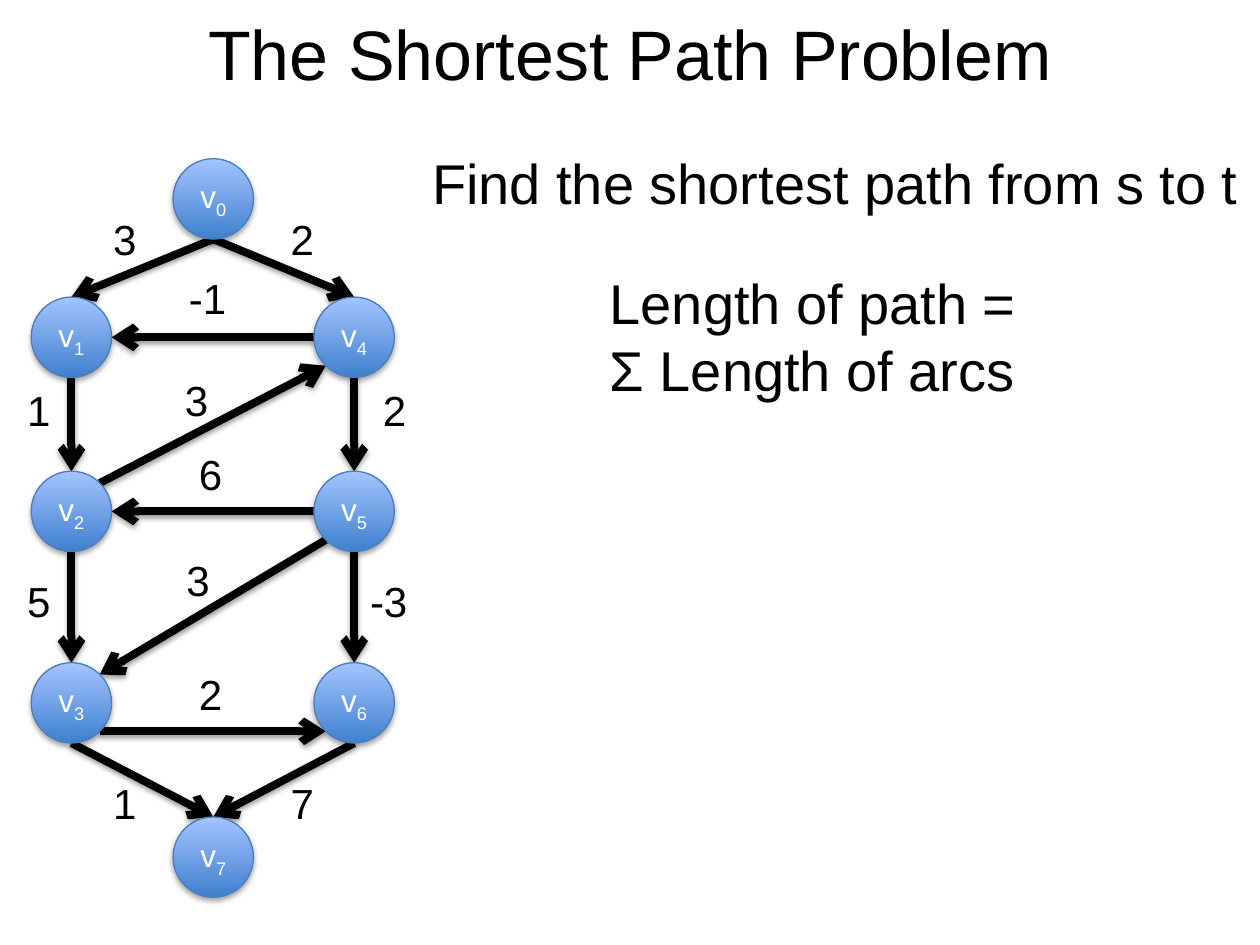
from math import sqrt
from lxml.etree import SubElement
from pptx import Presentation
from pptx.dml.color import RGBColor
from pptx.enum.shapes import MSO_CONNECTOR, MSO_SHAPE
from pptx.enum.text import MSO_ANCHOR, PP_ALIGN
from pptx.oxml.ns import qn
from pptx.util import Cm, Pt

BLACK = RGBColor(0x00, 0x00, 0x00)
WHITE = RGBColor(0xFF, 0xFF, 0xFF)
NODE_DARK = RGBColor(0x3F, 0x80, 0xCE)
NODE_LIGHT = RGBColor(0xA4, 0xC4, 0xFF)
NODE_EDGE = RGBColor(0x4B, 0x7E, 0xBC)

RADIUS = 0.81
DIAGONAL = sqrt(0.5)
SITES = {
    "top": (0, -1), "bottom": (0, 1), "left": (-1, 0), "right": (1, 0),
    "top right": (DIAGONAL, -DIAGONAL),
    "bottom left": (-DIAGONAL, DIAGONAL),
    "bottom right": (DIAGONAL, DIAGONAL),
}

LEFT, MIDDLE, RIGHT = 1.44, 4.3, 7.14
ROWS = (6.8, 10.31, 14.17)
NODES = [(MIDDLE, 4.01)]
NODES += [(x, y) for x in (LEFT, RIGHT) for y in ROWS]
NODES += [(MIDDLE, 17.28)]

ARCS = [
    (2, "top right", 4, "bottom left", "3", 3.48, 7.42),
    (5, "bottom", 6, "top", "-3", 7.21, 11.48),
    (0, "bottom", 1, "top", "3", 2.03, 4.17),
    (0, "bottom", 4, "top", "2", 5.61, 4.17),
    (1, "bottom", 2, "top", "1", 0.3, 7.62),
    (4, "bottom", 5, "top", "2", 7.47, 7.62),
    (4, "left", 1, "right", "-1", 3.56, 5.36),
    (5, "bottom left", 3, "top right", "3", 3.51, 11.05),
    (2, "bottom", 3, "top", "5", 0.3, 11.48),
    (5, "left", 2, "right", "6", 3.76, 8.92),
    (3, "bottom", 7, "top", "1", 2.03, 15.54),
    (6, "bottom", 7, "top", "7", 5.61, 15.54),
    (3, "bottom right", 6, "bottom left", "2", 3.76, 13.36),
]


class GraphSlide:
    font_name = "Arial"

    def __init__(self, slide):
        self.slide = slide

    def style(self, paragraph, size, color):
        paragraph.font.name = self.font_name
        paragraph.font.size = Pt(size)
        paragraph.font.color.rgb = color

    def shadow(self, effects, distance, opacity):
        outer = SubElement(effects, qn("a:outerShdw"), blurRad="40000",
                           dist=str(distance), dir="5400000", rotWithShape="0")
        color = SubElement(outer, qn("a:srgbClr"), val=str(BLACK))
        SubElement(color, qn("a:alpha"), val=str(opacity * 1000))

    def text(self, lines, left, top, width, height, size, centered=False):
        shape = self.slide.shapes.add_textbox(Cm(left), Cm(top), Cm(width), Cm(height))
        frame = shape.text_frame
        frame.word_wrap = centered
        frame.text = lines
        if centered:
            frame.vertical_anchor = MSO_ANCHOR.MIDDLE
        for paragraph in frame.paragraphs:
            paragraph.alignment = PP_ALIGN.CENTER if centered else PP_ALIGN.LEFT
            self.style(paragraph, size, BLACK)

    def site(self, node, side):
        return [Cm(center + RADIUS * offset)
                for center, offset in zip(NODES[node], SITES[side])]

    def arrow(self, start, start_side, end, end_side):
        connector = self.slide.shapes.add_connector(
            MSO_CONNECTOR.STRAIGHT,
            *self.site(start, start_side), *self.site(end, end_side))
        connector.line.color.rgb = BLACK
        connector.line.width = Pt(4.5)
        SubElement(connector.line._get_or_add_ln(), qn("a:tailEnd"), type="arrow")
        properties = connector._element.spPr
        self.shadow(SubElement(properties, qn("a:effectLst")), 20000, 38)

    def node(self, number, x, y):
        shape = self.slide.shapes.add_shape(
            MSO_SHAPE.OVAL, Cm(x - RADIUS), Cm(y - RADIUS),
            Cm(2 * RADIUS), Cm(2 * RADIUS))
        shape.fill.gradient()
        shape.fill.gradient_angle = 90
        for stop, color in zip(shape.fill.gradient_stops, (NODE_DARK, NODE_LIGHT)):
            stop.color.rgb = color
        shape.line.color.rgb = NODE_EDGE
        shape.line.width = Pt(0.75)
        shape.shadow.inherit = False
        effects = shape._element.spPr.find(qn("a:effectLst"))
        self.shadow(effects, 23000, 35)
        frame = shape.text_frame
        frame.margin_left = frame.margin_right = 0
        frame.vertical_anchor = MSO_ANCHOR.MIDDLE
        paragraph = frame.paragraphs[0]
        paragraph.alignment = PP_ALIGN.CENTER
        self.style(paragraph, 18, WHITE)
        paragraph.add_run().text = "v"
        subscript = paragraph.add_run()
        subscript.text = str(number)
        subscript._r.get_or_add_rPr().set("baseline", "-25000")


def main():
    presentation = Presentation()
    presentation.slide_width, presentation.slide_height = Cm(25.4), Cm(19.05)
    graph = GraphSlide(presentation.slides.add_slide(presentation.slide_layouts[6]))
    graph.text("The Shortest Path Problem", 1.27, 0.15, 22.86, 1.8, 40, centered=True)
    for start, start_side, end, end_side, *_ in ARCS:
        graph.arrow(start, start_side, end, end_side)
    for number, (x, y) in enumerate(NODES):
        graph.node(number, x, y)
    for *_, weight, left, top in ARCS:
        graph.text(weight, left, top, 0.71 + 0.28 * len(weight), 1.27, 24)
    graph.text("Find the shortest path from s to t", 8.46, 2.87, 16.92, 1.63, 32)
    graph.text("Length of path =\nΣ Length of arcs", 12.04, 5.28, 8.79, 3, 32)
    presentation.save("out.pptx")


if __name__ == "__main__":
    main()
